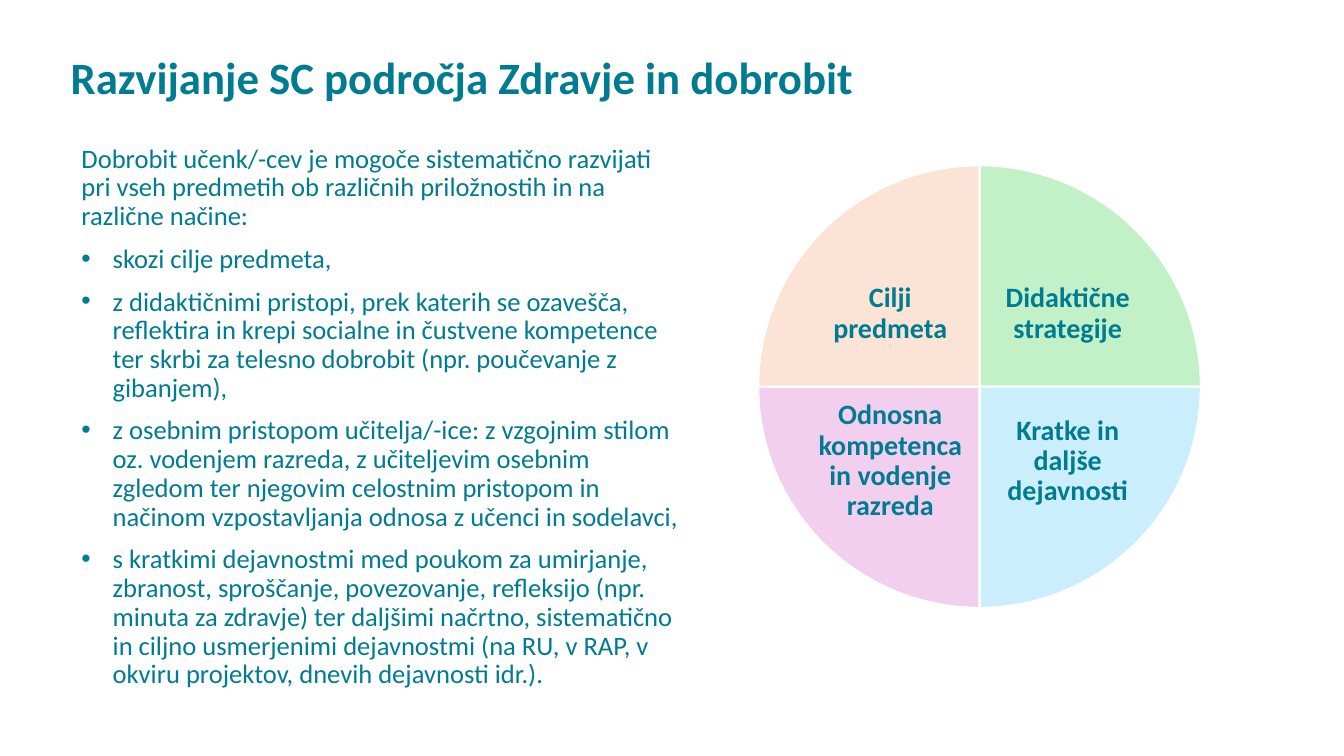
from lxml import etree
from pptx import Presentation
from pptx import util as u
from pptx.dml import color
from pptx.enum import shapes, text
from pptx.oxml import ns

TITLE = "Razvijanje SC področja Zdravje in dobrobit"
INTRO = ("Dobrobit učenk/-cev je mogoče sistematično razvijati pri vseh predmetih "
         "ob različnih priložnostih in na različne načine:")
POINTS = [
    "skozi cilje predmeta,",
    "z didaktičnimi pristopi, prek katerih se ozavešča, reflektira in krepi socialne "
    "in čustvene kompetence ter skrbi za telesno dobrobit (npr. poučevanje z gibanjem),",
    "z osebnim pristopom učitelja/-ice: z vzgojnim stilom oz. vodenjem razreda, "
    "z učiteljevim osebnim zgledom ter njegovim celostnim pristopom in načinom "
    "vzpostavljanja odnosa z učenci in sodelavci,",
    "s kratkimi dejavnostmi med poukom za umirjanje, zbranost, sproščanje, povezovanje, "
    "refleksijo (npr. minuta za zdravje) ter daljšimi načrtno, sistematično in ciljno "
    "usmerjenimi dejavnostmi (na RU, v RAP, v okviru projektov, dnevih dejavnosti idr.).",
]
PARTS = [
    ("Didaktične strategije", "C2F1C8", 162, 9.78, 2.46),
    ("Kratke in daljše dejavnosti", "CAEEFB", 0, 9.78, 3.92),
    ("Odnosna kompetenca in vodenje razreda", "F2CFEE", 54, 8.02, 3.92),
    ("Cilji predmeta", "FBE3D6", 108, 8.02, 2.46),
]


def paint(code):
    return color.RGBColor.from_string(code)


class Deck:
    font = "Calibri"
    ink = "007C92"
    edge = "FFFFFF"

    def __init__(self):
        self.prs = Presentation()
        self.prs.slide_width = u.Inches(13.33)
        self.prs.slide_height = u.Inches(7.5)
        self.slide = self.prs.slides.add_slide(self.prs.slide_layouts[5])
        self.wheel = self.slide.shapes.add_group_shape()

    def phrase(self, para, words, size, bold=False, align=text.PP_ALIGN.LEFT):
        para.alignment = align
        para.line_spacing = 0.9
        run = para.add_run()
        run.text = words
        run.font.name = self.font
        run.font.size = u.Pt(size)
        run.font.bold = bold
        run.font.color.rgb = paint(self.ink)

    def title(self, words, left, top, width, height):
        box = self.slide.shapes.title
        box.left, box.top = u.Inches(left), u.Inches(top)
        box.width, box.height = u.Inches(width), u.Inches(height)
        frame = box.text_frame
        frame.auto_size = text.MSO_AUTO_SIZE.NONE
        frame.vertical_anchor = text.MSO_ANCHOR.BOTTOM
        self.phrase(frame.paragraphs[0], words, 32, True)

    def bullet(self, para):
        props = para._p.get_or_add_pPr()
        props.set("marL", str(u.Inches(0.31)))
        props.set("indent", str(-u.Inches(0.31)))
        etree.SubElement(props, ns.qn("a:buFont")).set("typeface", "Arial")
        etree.SubElement(props, ns.qn("a:buChar")).set("char", "•")

    def body(self, intro, points, left, top, width, height):
        box = self.slide.shapes.add_textbox(
            u.Inches(left), u.Inches(top), u.Inches(width), u.Inches(height))
        frame = box.text_frame
        frame.word_wrap = True
        self.phrase(frame.paragraphs[0], intro, 19)
        for point in points:
            para = frame.add_paragraph()
            self.bullet(para)
            para.space_before = u.Pt(10)
            self.phrase(para, point, 19)

    def wedge(self, fill, start, left, top, size):
        pie = self.wheel.shapes.add_shape(
            shapes.MSO_SHAPE.PIE, u.Inches(left), u.Inches(top),
            u.Inches(size), u.Inches(size))
        pie.adjustments[0] = start
        pie.adjustments[1] = (start + 54) % 216
        pie.shadow.inherit = False
        pie.fill.solid()
        pie.fill.fore_color.rgb = paint(fill)
        pie.line.color.rgb = paint(self.edge)
        pie.line.width = u.Pt(1.5)

    def label(self, words, left, top, width, height):
        box = self.wheel.shapes.add_textbox(
            u.Inches(left), u.Inches(top), u.Inches(width), u.Inches(height))
        frame = box.text_frame
        frame.word_wrap = True
        frame.vertical_anchor = text.MSO_ANCHOR.MIDDLE
        frame.margin_left = frame.margin_right = u.Inches(0.03)
        frame.margin_top = frame.margin_bottom = u.Inches(0.03)
        self.phrase(frame.paragraphs[0], words, 20, True, text.PP_ALIGN.CENTER)


def main():
    deck = Deck()
    deck.title(TITLE, 0.6, 0.31, 11.5, 0.77)
    deck.body(INTRO, POINTS, 0.71, 1.39, 6.14, 5.72)
    for words, fill, start, left, top in PARTS:
        deck.wedge(fill, start, 7.52, 1.64, 4.39)
        deck.label(words, left, top, 1.62, 1.31)
    deck.prs.save("out.pptx")


if __name__ == "__main__":
    main()
